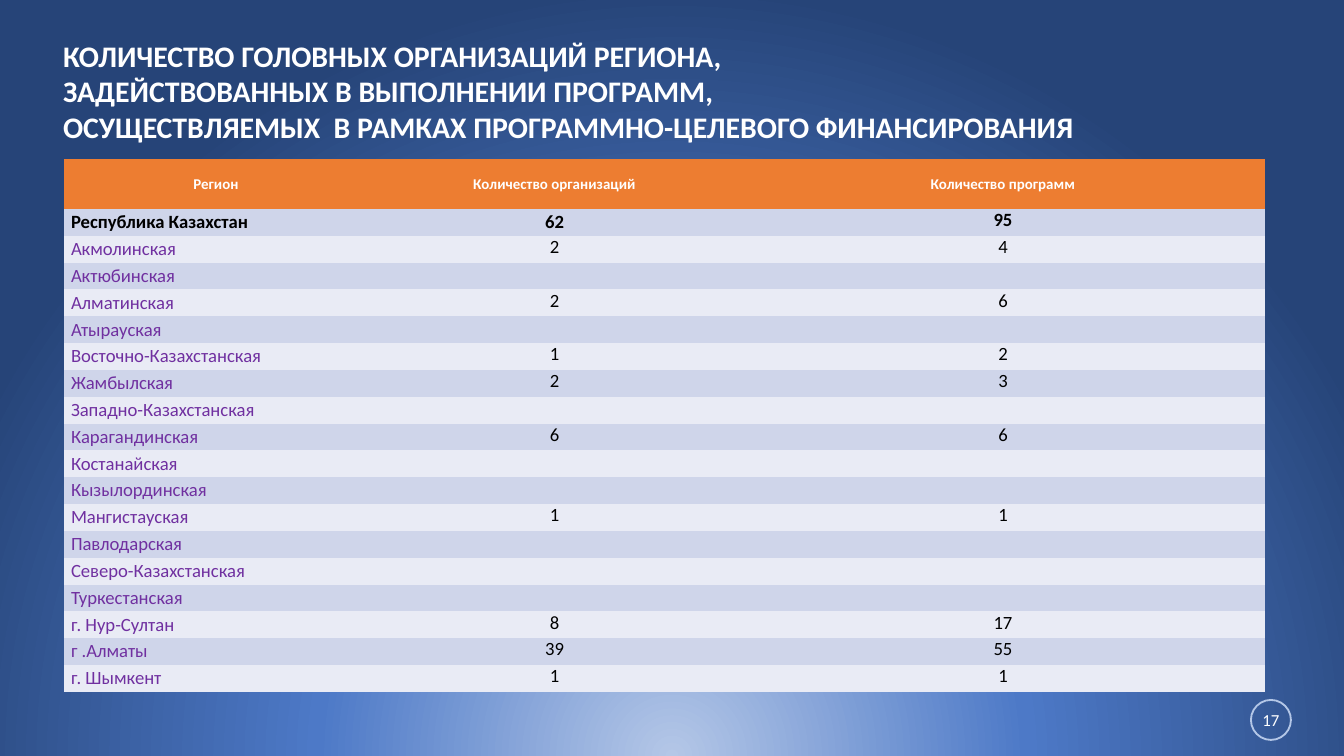
import typing

import pptx
import pptx.dml.color
import pptx.enum.shapes
import pptx.enum.text
import pptx.oxml
import pptx.oxml.ns
import pptx.util

SCALE = 914400 / 134.4
FONT = "Calibri"
WHITE, BLACK, PURPLE, ORANGE = "FFFFFF", "000000", "7030A0", "ED7D31"
BANDS = ("CFD5EA", "E9EBF5")
STOPS = ((0, "B4C7E7"), (46, "4D79C7"), (100, "264478"))
PLAIN = "{2D5ABB26-0587-4C30-8999-92F81FD0307C}"
ALIGN = pptx.enum.text.PP_ALIGN
ANCHOR = pptx.enum.text.MSO_ANCHOR


class Box(typing.NamedTuple):
    left: int
    top: int
    width: int
    height: int


class Style(typing.NamedTuple):
    size: int
    tint: str
    bold: bool = False
    align: ALIGN = ALIGN.CENTER
    anchor: ANCHOR = ANCHOR.MIDDLE


class Region(typing.NamedTuple):
    name: str
    firms: str = ""
    plans: str = ""


TITLE = (
    "КОЛИЧЕСТВО ГОЛОВНЫХ ОРГАНИЗАЦИЙ РЕГИОНА,\n"
    "ЗАДЕЙСТВОВАННЫХ В ВЫПОЛНЕНИИ ПРОГРАММ,\n"
    "ОСУЩЕСТВЛЯЕМЫХ  В РАМКАХ ПРОГРАММНО-ЦЕЛЕВОГО ФИНАНСИРОВАНИЯ"
)
HEADS = Region("Регион", "Количество организаций", "Количество программ")
REGIONS = (
    Region("Республика Казахстан", "62", "95"),
    Region("Акмолинская", "2", "4"),
    Region("Актюбинская"),
    Region("Алматинская", "2", "6"),
    Region("Атырауская"),
    Region("Восточно-Казахстанская", "1", "2"),
    Region("Жамбылская", "2", "3"),
    Region("Западно-Казахстанская"),
    Region("Карагандинская", "6", "6"),
    Region("Костанайская"),
    Region("Кызылординская"),
    Region("Мангистауская", "1", "1"),
    Region("Павлодарская"),
    Region("Северо-Казахстанская"),
    Region("Туркестанская"),
    Region("г. Нур-Султан", "8", "17"),
    Region("г .Алматы", "39", "55"),
    Region("г. Шымкент", "1", "1"),
)
COLS = (304, 373, 524)
GRID = Box(64, 159, sum(COLS), 533)
HEAD = 50


def px(count: float) -> int:
    return round(count * SCALE)


def color(code: str) -> pptx.dml.color.RGBColor:
    return pptx.dml.color.RGBColor.from_string(code)


def place(box: Box) -> list[int]:
    return [px(side) for side in box]


def pad(frame, side: int, edge: int) -> None:
    frame.margin_left = frame.margin_right = px(side)
    frame.margin_top = frame.margin_bottom = px(edge)


def write(frame, text: str, style: Style) -> None:
    frame.text = text
    for para in frame.paragraphs:
        para.alignment = style.align
        for run in para.runs:
            run.font.name = FONT
            run.font.size = pptx.util.Pt(style.size)
            run.font.bold = style.bold
            run.font.color.rgb = color(style.tint)
        if not para.runs:
            para._p.get_or_add_endParaRPr().set("sz", str(style.size * 100))


def draw_back(slide) -> None:
    slide.background.fill.gradient()
    old = slide._element.find(".//" + pptx.oxml.ns.qn("a:gradFill"))
    stops = "".join(
        f'<a:gs pos="{pos * 1000}"><a:srgbClr val="{code}"/></a:gs>'
        for pos, code in STOPS
    )
    new = pptx.oxml.parse_xml(
        f'<a:gradFill {pptx.oxml.ns.nsdecls("a")} rotWithShape="1">'
        f'<a:gsLst>{stops}</a:gsLst><a:path path="circle">'
        '<a:fillToRect l="50000" t="130000" r="50000" b="-30000"/>'
        "</a:path></a:gradFill>"
    )
    old.getparent().replace(old, new)


def draw_title(slide) -> None:
    title = slide.shapes.title
    title.left, title.top, title.width, title.height = place(Box(54, 32, 1046, 118))
    frame = title.text_frame
    pad(frame, 9, 5)
    frame.word_wrap = False
    frame.auto_size = pptx.enum.text.MSO_AUTO_SIZE.SHAPE_TO_FIT_TEXT
    frame.vertical_anchor = ANCHOR.MIDDLE
    write(frame, TITLE, Style(16, WHITE, True, ALIGN.LEFT))


def pick(row: int, col: int) -> Style:
    if row == 0:
        return Style(8, WHITE, True)
    total = row == 1
    if col == 0:
        return Style(10, BLACK if total else PURPLE, total, ALIGN.LEFT)
    middle = total and col == 1
    return Style(10, BLACK, total, anchor=ANCHOR.MIDDLE if middle else ANCHOR.TOP)


def draw_table(slide) -> None:
    rows = (HEADS, *REGIONS)
    shape = slide.shapes.add_table(len(rows), len(COLS), *place(GRID))
    table = shape.table
    table.horz_banding = False
    table._tbl.tblPr.find(pptx.oxml.ns.qn("a:tableStyleId")).text = PLAIN
    for col, width in zip(table.columns, COLS):
        col.width = px(width)
    for row, texts in enumerate(rows):
        step = (GRID.height - HEAD) / len(REGIONS)
        table.rows[row].height = px(step if row else HEAD)
        for col, text in enumerate(texts):
            cell, style = table.cell(row, col), pick(row, col)
            pad(cell, 7, 0)
            cell.vertical_anchor = style.anchor
            cell.fill.solid()
            cell.fill.fore_color.rgb = color(BANDS[(row - 1) % 2] if row else ORANGE)
            write(cell.text_frame, text, style)


def draw_page(slide) -> None:
    oval = slide.shapes.add_shape(
        pptx.enum.shapes.MSO_SHAPE.OVAL, *place(Box(1251, 700, 40, 40))
    )
    oval.shadow.inherit = False
    oval.fill.background()
    oval.line.color.rgb = color("B4C7E7")
    oval.line.width = pptx.util.Pt(1)
    frame = oval.text_frame
    pad(frame, 0, 7)
    frame.word_wrap = False
    frame.vertical_anchor = ANCHOR.MIDDLE
    write(frame, "17", Style(9, WHITE))


def main() -> None:
    deck = pptx.Presentation()
    deck.slide_width, deck.slide_height = px(1344), px(756)
    slide = deck.slides.add_slide(deck.slide_layouts[5])
    draw_back(slide)
    draw_title(slide)
    draw_table(slide)
    draw_page(slide)
    deck.save("out.pptx")


if __name__ == "__main__":
    main()
